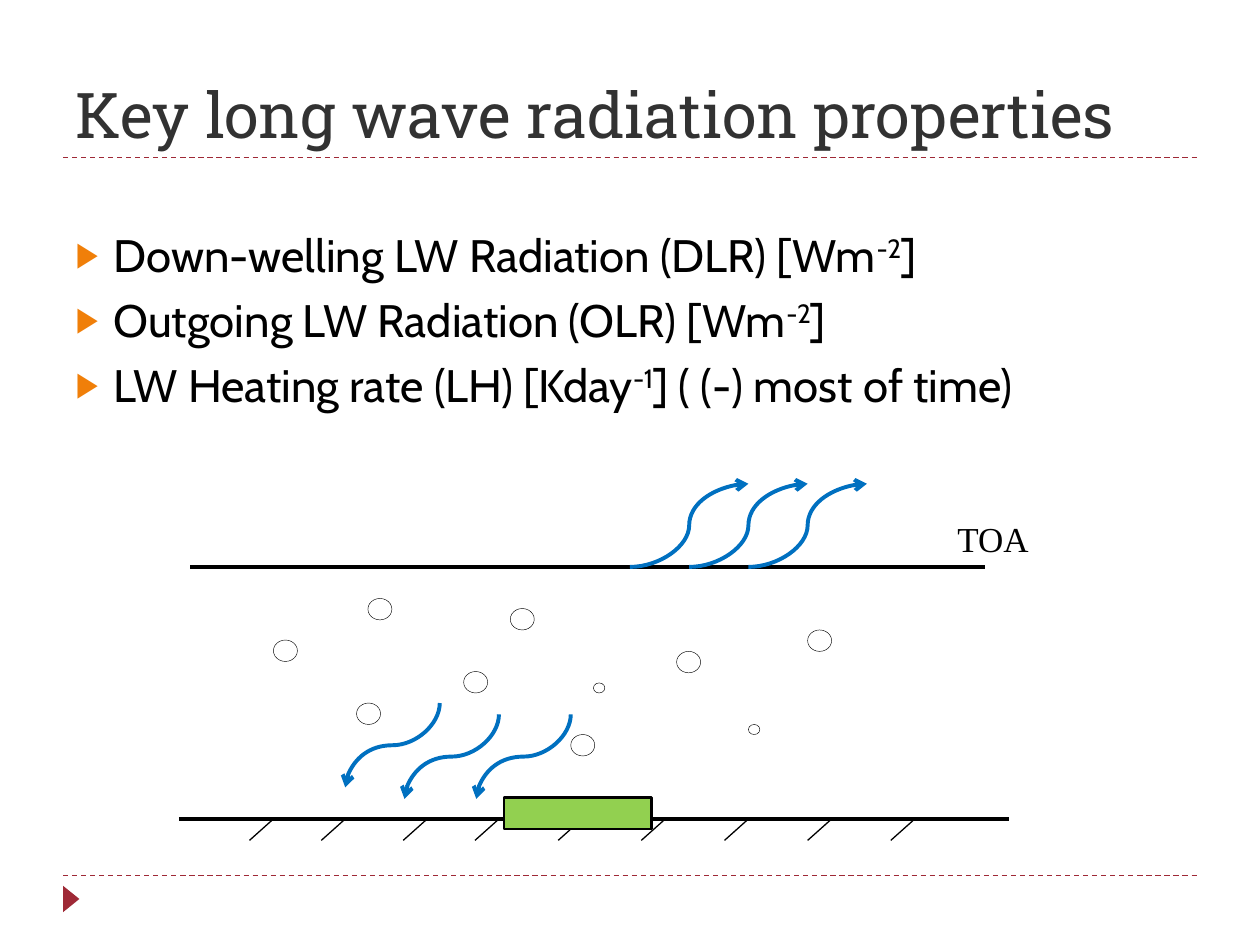
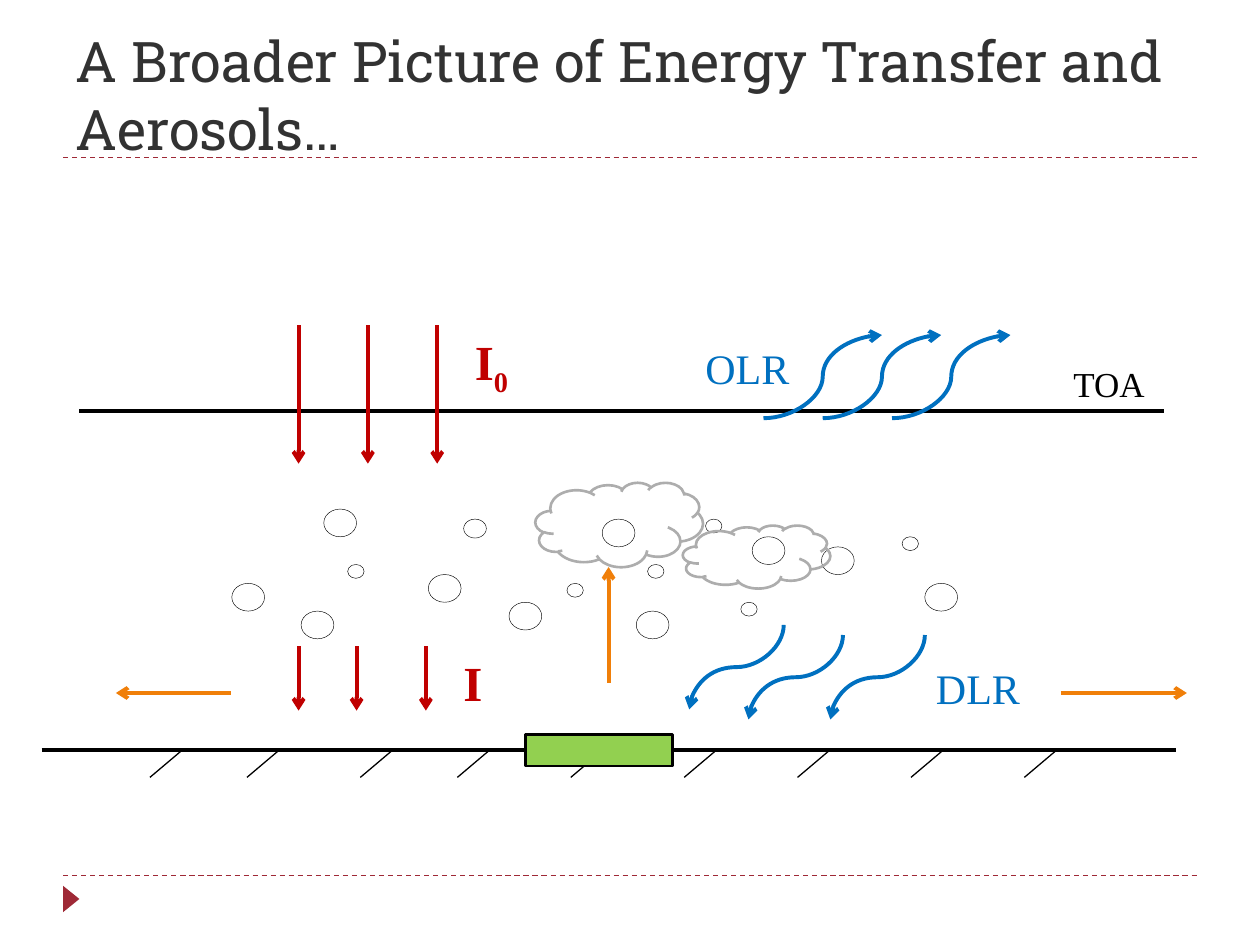
"""Build two slides on long wave radiation and energy transfer with aerosols."""
from lxml import etree
from pptx import Presentation
from pptx.dml.color import RGBColor
from pptx.enum.dml import MSO_LINE
from pptx.enum.shapes import MSO_CONNECTOR, MSO_SHAPE
from pptx.enum.text import MSO_ANCHOR, MSO_AUTO_SIZE, PP_ALIGN
from pptx.oxml.ns import qn
from pptx.util import Inches, Pt

STRAIGHT, CURVE = MSO_CONNECTOR.STRAIGHT, MSO_CONNECTOR.CURVE
ELLIPSE, RECTANGLE = MSO_SHAPE.OVAL, MSO_SHAPE.RECTANGLE
CLOUD, TRIANGLE = MSO_SHAPE.CLOUD, MSO_SHAPE.ISOSCELES_TRIANGLE
DASH, LEFT = MSO_LINE.DASH, PP_ALIGN.LEFT
TOP, BOTTOM = MSO_ANCHOR.TOP, MSO_ANCHOR.BOTTOM
NO_AUTOFIT = MSO_AUTO_SIZE.NONE

COLORS = {
    "black": "000000", "title": "323232", "accent": "9F2936", "orange": "F07F09",
    "longwave": "0070C0", "solar": "C00000", "surface": "92D050", "cloud": "ADADAD",
}
TITLE_FONT, BODY_FONT, LABEL_FONT = "Roboto Slab", "Cabin", "Times New Roman"
SUPERSCRIPT, SUBSCRIPT = 30, -25

PROPERTIES = [
    [("Down-welling LW Radiation (DLR) [Wm", 0), ("-2", SUPERSCRIPT), ("]", 0)],
    [("Outgoing LW Radiation (OLR) [Wm", 0), ("-2", SUPERSCRIPT), ("]", 0)],
    [("LW Heating rate (LH) [Kday", 0), ("-1", SUPERSCRIPT),
     ("] ( (-) most of time)", 0)],
]

KEY_PROPERTIES = {
    "ground": (1.42, 8.01, 6.5),
    "hatches": ([2.17, 2.74, 3.39, 3.96, 4.62, 5.28, 5.94, 6.6, 7.26], 0.19, 0.17),
    "toa": (1.51, 7.82, 4.5),
    "aerosols": [
        (0.19, 0.17, [(2.17, 5.08), (2.83, 5.58), (4.05, 4.83), (2.92, 4.75),
                      (4.53, 5.83), (5.37, 5.17), (6.41, 5), (3.68, 5.33)]),
        (0.09, 0.08, [(5.94, 5.75), (4.71, 5.42)]),
    ],
    "outgoing": [(5, 4.5), (5.47, 4.5), (5.94, 4.5)],
    "downwelling": [(3.49, 5.58), (3.96, 5.67), (4.53, 5.67)],
    "surface": (4, 6.33),
    "labels": [([("TOA", 0)], 7.5, 4.06, 1, 20, "black", False)],
}

BROADER_PICTURE = {
    "ground": (0.33, 9.33, 5.95),
    "hatches": ([1.45, 2.22, 3.12, 3.89, 4.79, 5.69, 6.59, 7.49, 8.39], 0.26, 0.22),
    "toa": (0.63, 9.24, 3.26),
    "aerosols": [
        (0.26, 0.22, [(1.84, 4.63), (2.39, 4.85), (4.04, 4.78), (2.57, 4.04),
                      (5.05, 4.85), (4.78, 4.12), (7.34, 4.63), (3.4, 4.56),
                      (6.52, 4.34), (5.97, 4.26)]),
        (0.18, 0.15, [(3.68, 4.12)]),
        (0.13, 0.11, [(4.5, 4.63), (5.14, 4.48), (5.6, 4.12), (2.76, 4.48),
                      (5.88, 4.78), (7.16, 4.26)]),
    ],
    "outgoing": [(6.06, 3.32), (6.53, 3.32), (7.08, 3.32)],
    "downwelling": [(6.22, 4.96), (6.69, 5.04), (7.34, 5.04)],
    "surface": (4.17, 5.83),
    "labels": [
        ([("I", 0), ("0", SUBSCRIPT)], 3.67, 2.58, 0.55, 28, "solar", True),
        ([("I", 0)], 3.58, 5.13, 0.38, 28, "solar", True),
        ([("TOA", 0)], 8.42, 2.83, 0.92, 20, "black", False),
        ([("DLR", 0)], 7.33, 5.21, 0.89, 24, "longwave", False),
        ([("OLR", 0)], 5.5, 2.67, 1, 24, "longwave", False),
    ],
}
SOLAR_BEAMS = [([2.37, 2.92, 3.47], 2.58, 3.68), ([2.37, 2.83, 3.38], 5.13, 5.64)]
HEAT_FLOWS = [(1.83, 5.5, 0.92, 5.5), (4.83, 5.42, 4.83, 4.5), (8.42, 5.5, 9.42, 5.5)]
CLOUDS = [(4.25, 3.83, 1.33, 0.67), (5.42, 4.17, 1.17, 0.5)]


def color(name):
    return RGBColor.from_string(COLORS[name])


def add_line(slide, start_x, start_y, end_x, end_y, color_name="black", width=2.25,
             arrow=False, kind=STRAIGHT):
    line = slide.shapes.add_connector(
        kind, *map(Inches, (start_x, start_y, end_x, end_y)))
    line.line.color.rgb = color(color_name)
    line.line.width = Pt(width)
    if arrow:
        outline = line.line._get_or_add_ln()
        etree.SubElement(outline, qn("a:tailEnd"), type="arrow")
    etree.SubElement(line._element.spPr, qn("a:effectLst"))
    return line


def add_figure(slide, kind, left, top, width, height, fill=None, outline=None, weight=0):
    shape = slide.shapes.add_shape(kind, *map(Inches, (left, top, width, height)))
    shape.shadow.inherit = False
    if fill:
        shape.fill.solid()
        shape.fill.fore_color.rgb = color(fill)
    else:
        shape.fill.background()
    if outline:
        shape.line.color.rgb = color(outline)
        shape.line.width = Pt(weight)
    else:
        shape.line.fill.background()
    return shape


def add_runs(paragraph, parts, font_name, size, color_name, bold=False):
    for text, baseline in parts:
        run = paragraph.add_run()
        run.text = text
        run.font.name = font_name
        run.font.size = Pt(size)
        run.font.bold = bold
        run.font.color.rgb = color(color_name)
        if baseline:
            run._r.get_or_add_rPr().set("baseline", str(baseline * 1000))


def place(shape, left, top, width, height, anchor):
    shape.left, shape.top = Inches(left), Inches(top)
    shape.width, shape.height = Inches(width), Inches(height)
    frame = shape.text_frame
    frame.auto_size = NO_AUTOFIT
    frame.word_wrap = True
    frame.vertical_anchor = anchor
    return frame


def add_slide(presentation, layout_index, title, top, size):
    slide = presentation.slides.add_slide(presentation.slide_layouts[layout_index])
    for rule_y in (6.95, 1.25):
        add_line(slide, 0.5, rule_y, 9.5, rule_y, "accent", 0.75).line.dash_style = DASH
    add_figure(slide, TRIANGLE, 0.46, 7.07, 0.21, 0.13, fill="accent").rotation = 90
    frame = place(slide.shapes.title, 0.5, top, 9, 1.08, BOTTOM)
    paragraph = frame.paragraphs[0]
    paragraph.alignment = LEFT
    add_runs(paragraph, [(title, 0)], TITLE_FONT, size, "title")
    return slide


def set_bullet(paragraph):
    properties = paragraph._p.get_or_add_pPr()
    properties.set("marL", str(Inches(0.3)))
    properties.set("indent", str(-Inches(0.3)))
    bullet_color = etree.SubElement(properties, qn("a:buClr"))
    etree.SubElement(bullet_color, qn("a:srgbClr"), val=COLORS["orange"])
    etree.SubElement(properties, qn("a:buSzPct"), val="76000")
    etree.SubElement(properties, qn("a:buChar"), char="▶")


def fill_list(slide, items):
    frame = place(slide.placeholders[1], 0.5, 1.75, 9, 2.42, TOP)
    for index, parts in enumerate(items):
        paragraph = frame.add_paragraph() if index else frame.paragraphs[0]
        paragraph.space_before = Pt(6)
        set_bullet(paragraph)
        add_runs(paragraph, parts, BODY_FONT, 26, "black")


def add_downwelling_wave(slide, start_x, start_y, run=0.75, drop=0.67):
    left = start_x - (run + drop) / 2
    top = start_y + (drop - run) / 2
    wave = add_line(slide, left, top, left + drop, top + run, "longwave",
                    arrow=True, kind=CURVE)
    wave._element.spPr.find(qn("a:xfrm")).set("rot", "5400000")


def draw_atmosphere(slide, scene):
    for level in ("ground", "toa"):
        left, right, y = scene[level]
        add_line(slide, left, y, right, y)
    ground_y = scene["ground"][2]
    tops, run, drop = scene["hatches"]
    for x in tops:
        add_line(slide, x, ground_y, x - run, ground_y + drop, width=0.75)
    for width, height, spots in scene["aerosols"]:
        for left, top in spots:
            add_figure(slide, ELLIPSE, left, top, width, height,
                       outline="black", weight=0.25)
    for x, y in scene["outgoing"]:
        add_line(slide, x, y, x + 0.94, y - 0.66, "longwave", arrow=True, kind=CURVE)
    for x, y in scene["downwelling"]:
        add_downwelling_wave(slide, x, y)
    add_figure(slide, RECTANGLE, *scene["surface"], 1.17, 0.25, "surface", "black", 1.5)
    for parts, left, top, width, size, color_name, bold in scene["labels"]:
        box = slide.shapes.add_textbox(0, 0, 0, 0)
        frame = place(box, left, top, width, 0.5, TOP)
        add_runs(frame.paragraphs[0], parts, LABEL_FONT, size, color_name, bold)


def main():
    presentation = Presentation()
    presentation.slide_width, presentation.slide_height = Inches(10), Inches(7.5)

    slide = add_slide(presentation, 1, "Key long wave radiation properties", 0.17, 36)
    fill_list(slide, PROPERTIES)
    draw_atmosphere(slide, KEY_PROPERTIES)

    slide = add_slide(presentation, 5,
                      "A Broader Picture of Energy Transfer and Aerosols…", 0.25, 32)
    draw_atmosphere(slide, BROADER_PICTURE)
    for columns, top, bottom in SOLAR_BEAMS:
        for x in columns:
            add_line(slide, x, top, x, bottom, "solar", arrow=True)
    for flow in HEAT_FLOWS:
        add_line(slide, *flow, "orange", arrow=True)
    for bounds in CLOUDS:
        add_figure(slide, CLOUD, *bounds, outline="cloud", weight=1.5)

    presentation.save("out.pptx")


if __name__ == "__main__":
    main()
